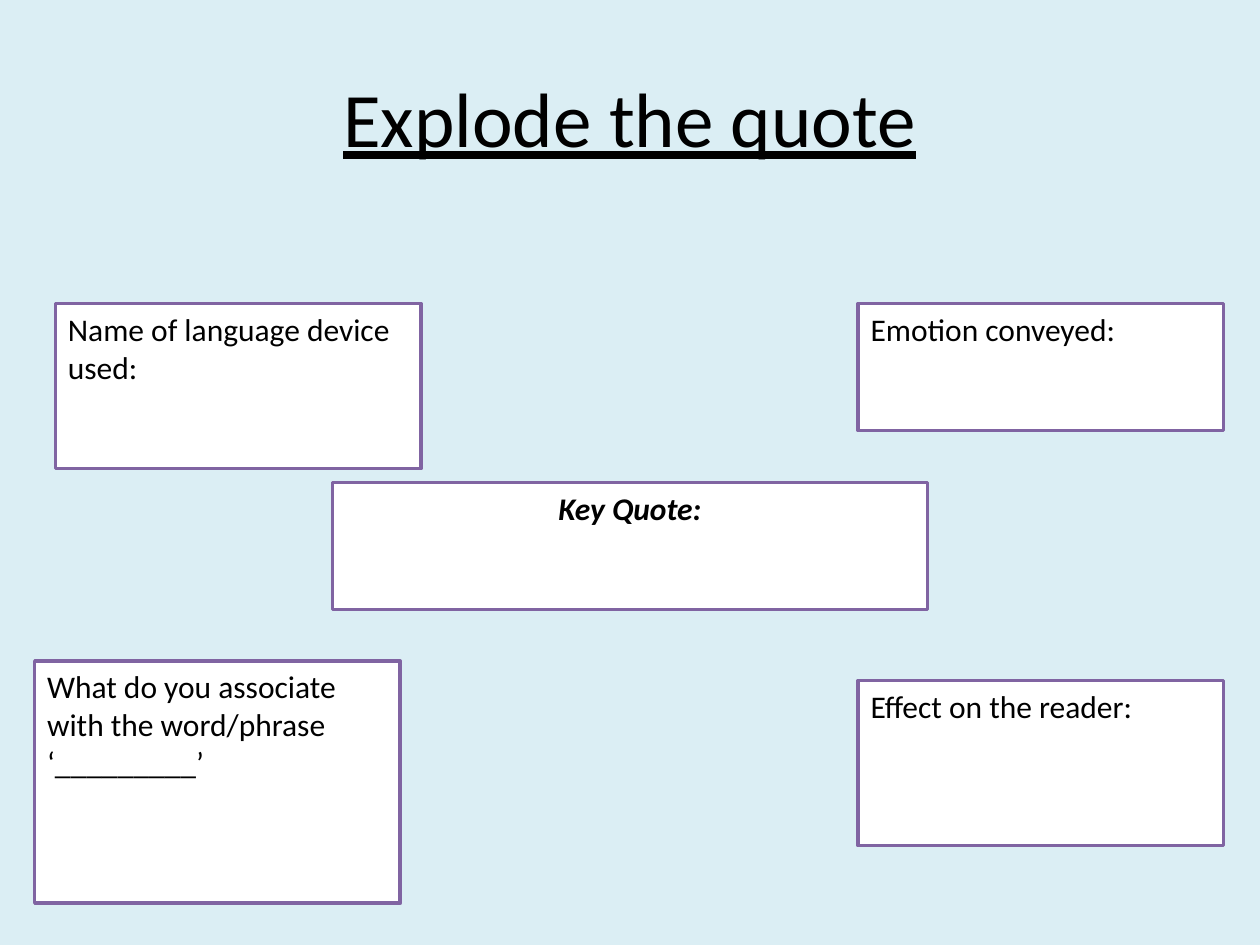
import dataclasses

import pptx
import pptx.dml.color
import pptx.enum.shapes
import pptx.enum.text
import pptx.util

Cm = pptx.util.Cm
Pt = pptx.util.Pt
RGB = pptx.dml.color.RGBColor
ALIGN = pptx.enum.text.PP_ALIGN
ANCHOR = pptx.enum.text.MSO_ANCHOR


@dataclasses.dataclass(frozen=True)
class Theme:
    """Colours, font and sizes shared by the whole slide."""

    font: str = "Calibri"
    background: RGB = RGB(0xDB, 0xEE, 0xF4)
    panel: RGB = RGB(0xFF, 0xFF, 0xFF)
    border: RGB = RGB(0x80, 0x64, 0xA2)
    ink: RGB = RGB(0, 0, 0)
    title_size: Pt = Pt(44)
    prompt_size: Pt = Pt(18)
    border_width: Pt = Pt(2)


THEME = Theme()
PROMPT_WIDTH = 7.37
RIGHT_COLUMN = 17.3
TOP_ROW = 6.12
SHORT, MEDIUM, TALL = 2.56, 3.33, 4.88
PROMPTS = [
    ("Name of language device used:", 1.12, TOP_ROW, MEDIUM),
    ("Emotion conveyed:", RIGHT_COLUMN, TOP_ROW, SHORT),
    ("What do you associate with the word/phrase ‘_________’", 0.7, 13.33, TALL),
    ("Effect on the reader:", RIGHT_COLUMN, 13.72, MEDIUM),
]


def place(shape, left, top, width, height):
    """Set a shape's position and size in centimetres."""
    shape.left, shape.top = Cm(left), Cm(top)
    shape.width, shape.height = Cm(width), Cm(height)


def write(frame, wording, size, align, anchor):
    """Write one run of themed text and return its font."""
    frame.word_wrap = True
    frame.vertical_anchor = anchor
    paragraph = frame.paragraphs[0]
    paragraph.alignment = align
    run = paragraph.add_run()
    run.text = wording
    run.font.name = THEME.font
    run.font.size = size
    run.font.color.rgb = THEME.ink
    return run.font


def add_title(slide, wording):
    """Place and underline the slide title."""
    title = slide.shapes.title
    place(title, 1.27, 0.76, 22.86, 3.18)
    font = write(title.text_frame, wording, THEME.title_size, ALIGN.CENTER, ANCHOR.MIDDLE)
    font.underline = True


def add_panel(slide, wording, left, top, width, height, align=ALIGN.LEFT):
    """Add a bordered writing panel and return the font of its heading."""
    panel = slide.shapes.add_shape(
        pptx.enum.shapes.MSO_SHAPE.RECTANGLE, Cm(left), Cm(top), Cm(width), Cm(height)
    )
    panel.shadow.inherit = False
    panel.fill.solid()
    panel.fill.fore_color.rgb = THEME.panel
    panel.line.color.rgb = THEME.border
    panel.line.width = THEME.border_width
    return write(panel.text_frame, wording, THEME.prompt_size, align, ANCHOR.TOP)


def main():
    """Build the worksheet slide and save it."""
    deck = pptx.Presentation()
    deck.slide_width, deck.slide_height = Cm(25.4), Cm(19.05)
    slide = deck.slides.add_slide(deck.slide_layouts[5])
    slide.background.fill.solid()
    slide.background.fill.fore_color.rgb = THEME.background

    add_title(slide, "Explode the quote")
    key_quote = add_panel(slide, "Key Quote:", 6.7, 9.73, 12, SHORT, ALIGN.CENTER)
    key_quote.bold = key_quote.italic = True
    for wording, left, top, height in PROMPTS:
        add_panel(slide, wording, left, top, PROMPT_WIDTH, height)

    deck.save("out.pptx")


if __name__ == "__main__":
    main()
